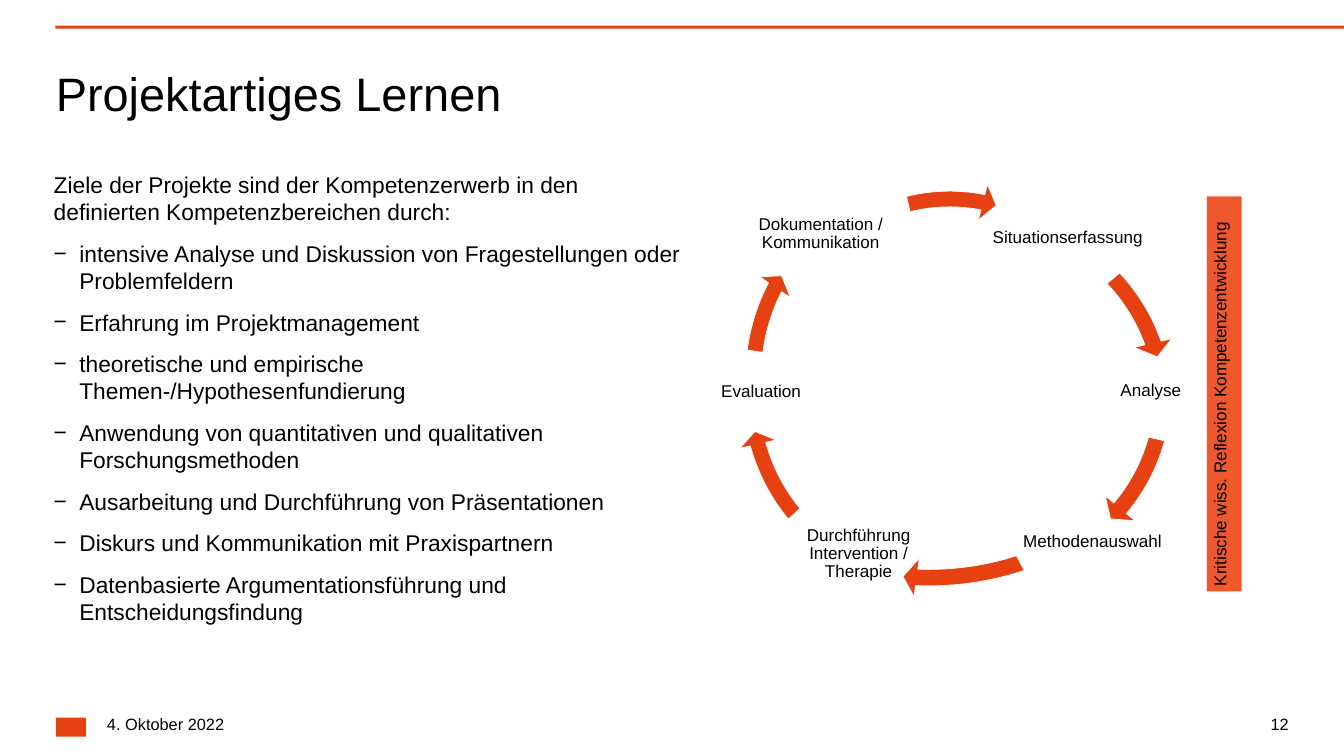
from lxml import etree
from pptx import Presentation
from pptx.dml.color import RGBColor
from pptx.enum.shapes import MSO_SHAPE
from pptx.enum.text import MSO_ANCHOR, PP_ALIGN
from pptx.oxml.ns import qn
from pptx.util import Inches, Pt

RECTANGLE, CIRCULAR_ARROW = MSO_SHAPE.RECTANGLE, MSO_SHAPE.CIRCULAR_ARROW
TOP, MIDDLE = MSO_ANCHOR.TOP, MSO_ANCHOR.MIDDLE
LEFT, CENTER, RIGHT = PP_ALIGN.LEFT, PP_ALIGN.CENTER, PP_ALIGN.RIGHT

ORANGE = RGBColor(0xE7, 0x40, 0x11)
LIGHT_ORANGE = RGBColor(0xEF, 0x57, 0x2D)
BLACK = RGBColor(0, 0, 0)
WHITE = RGBColor(0xFF, 0xFF, 0xFF)
FONT = "Arial"

INTRO = "Ziele der Projekte sind der Kompetenzerwerb in den definierten Kompetenzbereichen durch:"
GOALS = [
    "intensive Analyse und Diskussion von Fragestellungen oder Problemfeldern",
    "Erfahrung im Projektmanagement",
    "theoretische und empirische Themen-/Hypothesenfundierung",
    "Anwendung von quantitativen und qualitativen Forschungsmethoden",
    "Ausarbeitung und Durchführung von Präsentationen",
    "Diskurs und Kommunikation mit Praxispartnern",
    "Datenbasierte Argumentationsführung und Entscheidungsfindung",
]
CYCLE_STEPS = [
    ("Situationserfassung", 4.83, 0.48, 3.76, 1.65),
    ("Analyse", 7.55, 3.47, 1.57, 1.65),
    ("Methodenauswahl", 5.4, 6.42, 3.59, 1.65),
    ("Durchführung Intervention / Therapie", 0.97, 6.77, 3.31, 1.42),
    ("Evaluation", -0.3, 3.49, 2.04, 1.65),
    ("Dokumentation / Kommunikation", 0.23, 0.48, 3.31, 1.48),
]
ARROW_HEIGHT = 8.03
CYCLE_ARROWS = [
    (0.42, 0.48, 8.53, 205.72, 192.32),
    (0.33, 0.34, 8.61, 21.45, 7.78),
    (-1, 0.29, 9.99, 56.22, 37.14),
    (0.21, 0, 7.67, 125.91, 112.95),
    (0.16, 0.29, 7.67, 97.72, 82.63),
    (0.57, 0.18, 7.67, 168.16, 154.32),
]


def add_block(page, kind, left, top, width, height, color):
    """Add a flat preset shape without outline."""
    block = page.shapes.add_shape(
        kind, Inches(left), Inches(top), Inches(width), Inches(height))
    block.shadow.inherit = False
    block.fill.solid()
    block.fill.fore_color.rgb = color
    block.line.fill.background()
    return block


def write(para, text, size, align=LEFT, spacing=None):
    """Add one styled run to a paragraph."""
    para.alignment = align
    para.line_spacing = spacing
    span = para.add_run()
    span.text = text
    span.font.name = FONT
    span.font.size = Pt(size)
    span.font.color.rgb = BLACK


def set_frame(frame, inset, anchor):
    """Make a text frame wrap, with equal insets."""
    frame.word_wrap = True
    frame.vertical_anchor = anchor
    frame.margin_left = frame.margin_right = Inches(inset)
    frame.margin_top = frame.margin_bottom = Inches(inset)
    return frame


def add_text_frame(page, left, top, width, height):
    """Add a text box without insets and return its frame."""
    box = page.shapes.add_textbox(
        Inches(left), Inches(top), Inches(width), Inches(height))
    return set_frame(box.text_frame, 0, TOP)


def add_step(page, text, left, top, width, height):
    """Add an unfilled outline that holds the label of a cycle step."""
    right, bottom = left + width, top + height
    builder = page.shapes.build_freeform(Inches(left), Inches(top))
    corners = [(right, top), (right, bottom), (left, bottom)]
    builder.add_line_segments([(Inches(x), Inches(y)) for x, y in corners])
    step = builder.convert_to_shape()
    step.shadow.inherit = False
    step.fill.background()
    step.line.fill.background()
    frame = set_frame(step.text_frame, 0.06, MIDDLE)
    write(frame.paragraphs[0], text, 24, CENTER, 0.9)


def add_header(page, left, top, width):
    """Place the rule and the title."""
    add_block(page, RECTANGLE, left, top, width, 0.06, ORANGE)
    title = add_text_frame(page, left + 0.01, top + 0.68, 19.93, 1.86)
    write(title.paragraphs[0], "Projektartiges Lernen", 66, spacing=Pt(85))


def add_goals(page, left, top, width, height):
    """Place the introduction and the dashed list of goals."""
    frame = add_text_frame(page, left, top, width, height)
    for index, text in enumerate([INTRO] + GOALS):
        para = frame.add_paragraph() if index else frame.paragraphs[0]
        write(para, text, 32, spacing=Pt(38.4))
        para.space_before = para.space_after = Pt(10)
        if index:
            properties = para._p.get_or_add_pPr()
            properties.set("marL", str(Inches(0.5)))
            properties.set("indent", str(-Inches(0.5)))
            etree.SubElement(properties, qn("a:buFont")).set("typeface", FONT)
            etree.SubElement(properties, qn("a:buChar")).set("char", "−")


def add_cycle(page, left, top):
    """Place the project cycle of arrows and step labels."""
    for x, y, width, end, start in CYCLE_ARROWS:
        arrow = add_block(page, CIRCULAR_ARROW, left + x, top + y,
                          width, ARROW_HEIGHT, ORANGE)
        arrow.line.color.rgb = WHITE
        arrow.line.width = Pt(1)
        for index, value in enumerate((0.04, 2.51, end, start, 0.047)):
            arrow.adjustments[index] = value
    for text, x, y, width, height in CYCLE_STEPS:
        add_step(page, text, left + x, top + y, width, height)


def add_reflection_bar(page, left, top, width, height):
    """Place the bar with text that reads upwards."""
    bar = add_block(page, RECTANGLE, left, top, width, height, LIGHT_ORANGE)
    frame = bar.text_frame
    frame.word_wrap = True
    frame.vertical_anchor = TOP
    frame._txBody.bodyPr.set("vert", "vert270")
    write(frame.paragraphs[0], "Kritische wiss. Reflexion Kompetenzentwicklung", 24)


def add_footer(page, left, top, width):
    """Place the emblem block, the date and the page number."""
    add_block(page, RECTANGLE, left, top + 0.06, 0.59, 0.37, ORANGE)
    date = add_text_frame(page, left + 1, top, 5.91, 0.79)
    write(date.paragraphs[0], "4. Oktober 2022", 23, spacing=Pt(27))
    number = add_text_frame(page, left + width - 1.58, top, 1.58, 0.79)
    write(number.paragraphs[0], "12", 23, RIGHT, Pt(27))


def main():
    """Build the deck and save it."""
    deck = Presentation()
    deck.slide_width, deck.slide_height = Inches(26.26), Inches(14.76)
    page = deck.slides.add_slide(deck.slide_layouts[6])
    add_header(page, 1.08, 0.5, 25.18)
    add_goals(page, 1.05, 3.34, 12.39, 9.23)
    add_cycle(page, 14.15, 3.35)
    add_reflection_bar(page, 23.58, 3.84, 0.68, 7.72)
    add_footer(page, 1.09, 13.97, 24.09)
    deck.save("out.pptx")


if __name__ == "__main__":
    main()
